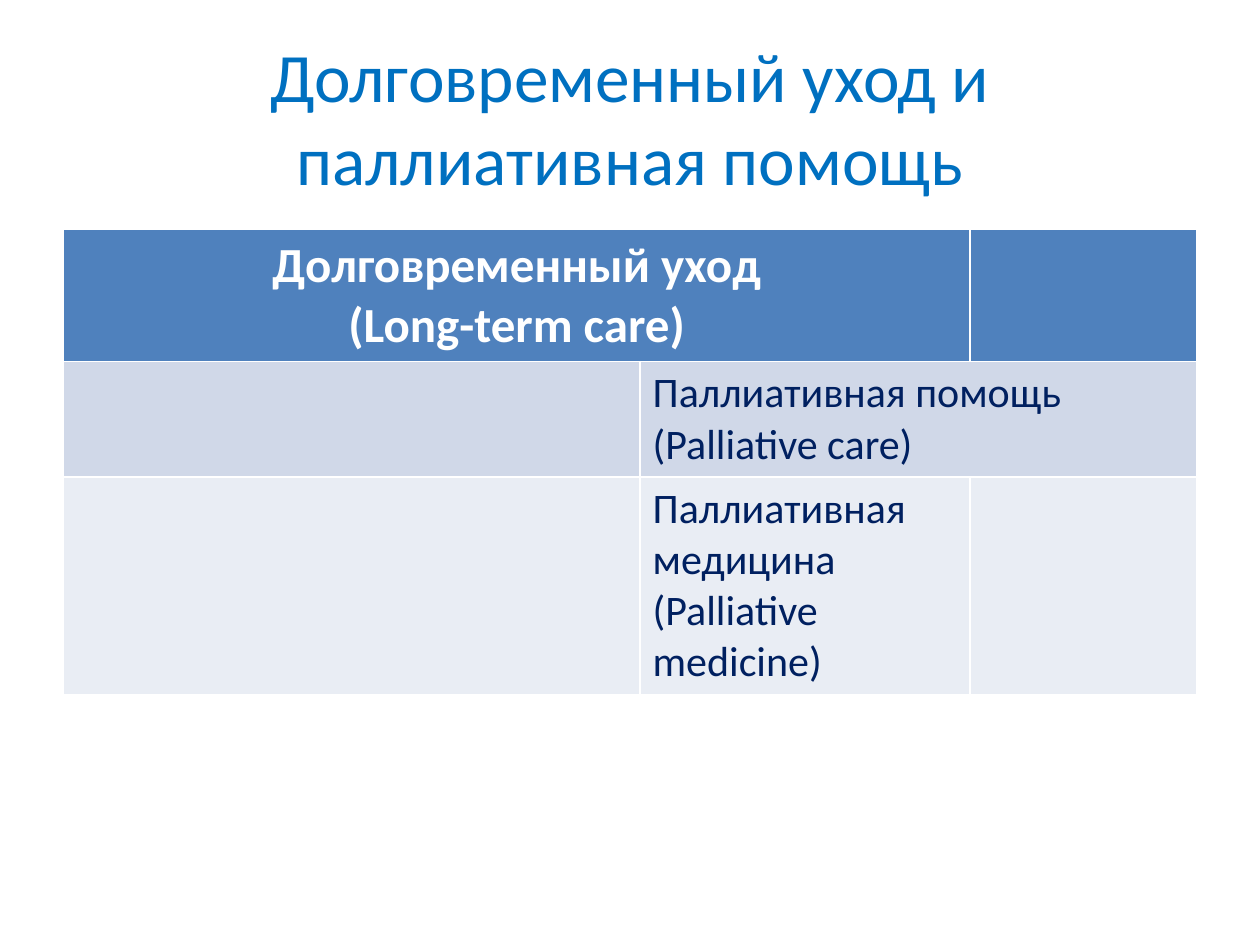
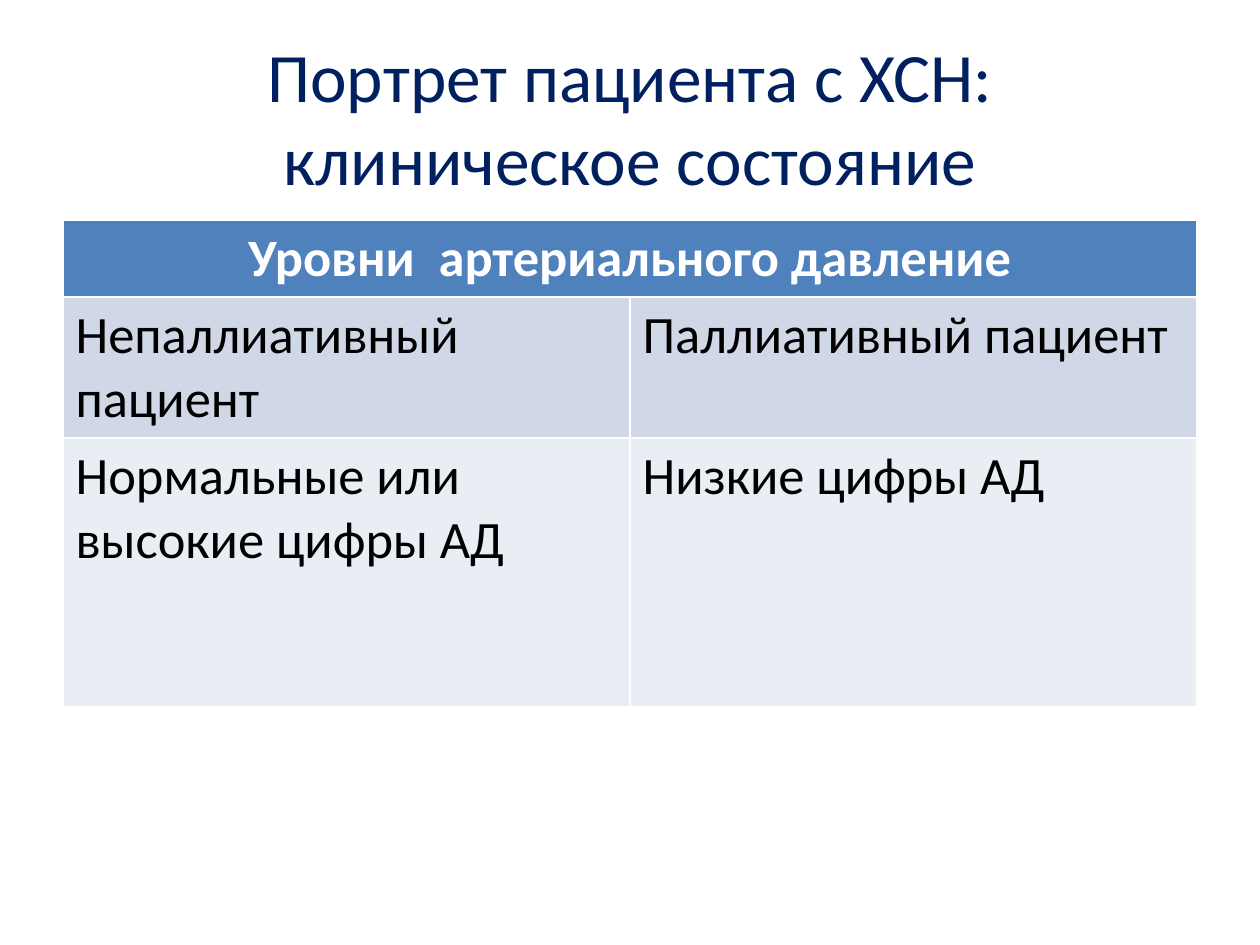
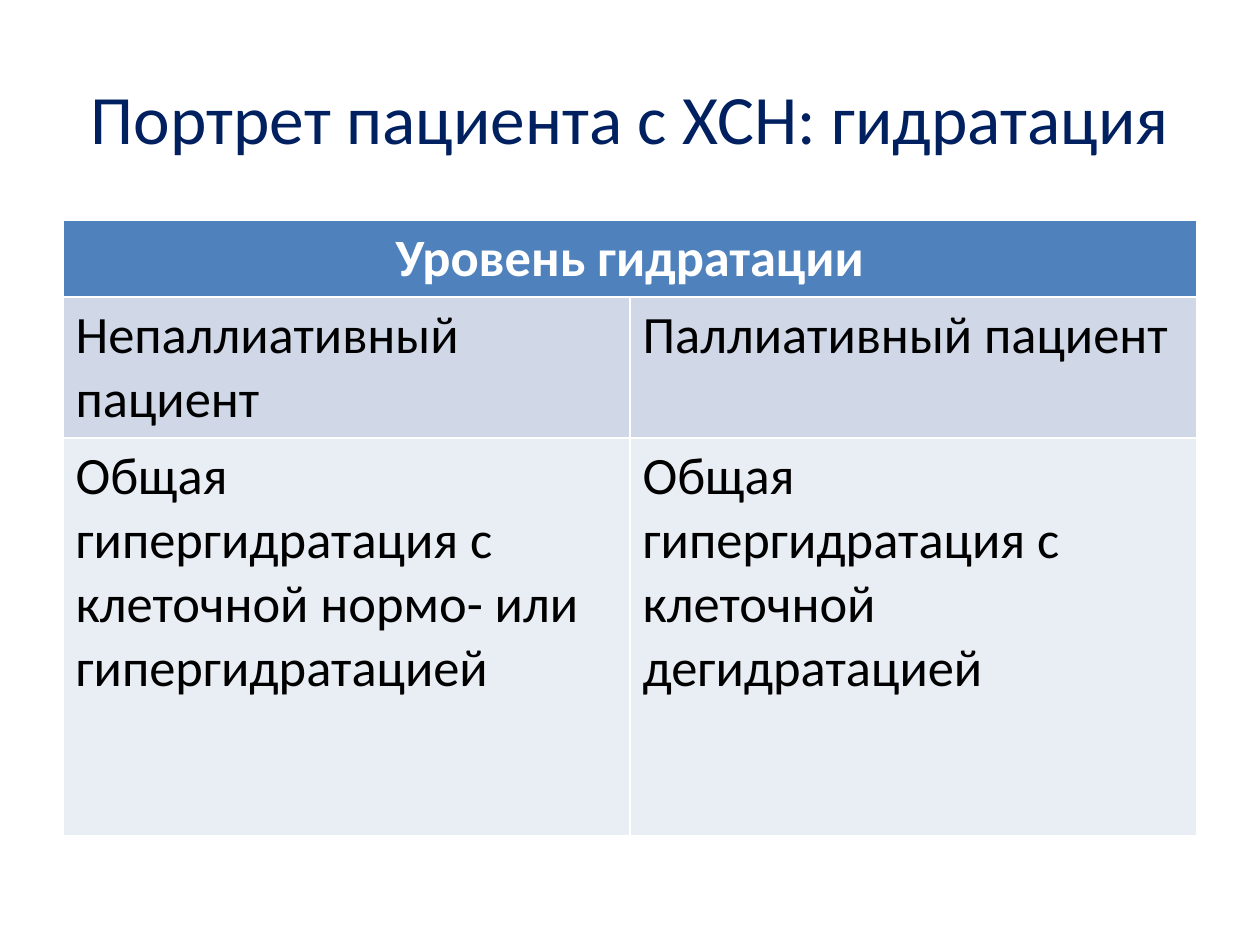
from pptx import Presentation
from pptx.dml.color import RGBColor
from pptx.enum.text import MSO_ANCHOR, MSO_AUTO_SIZE, PP_ALIGN
from pptx.util import Inches, Pt

# Shared style
FONT = "Calibri"
BLUE, NAVY, WHITE, BLACK = "0070C0", "002060", "FFFFFF", "000000"
ROW_FILLS = ["4F81BD", "D0D8E8", "E9EDF4"]
LEFT, WIDTH = 0.5, 9
TITLE_BOX = (LEFT, 0.3, WIDTH, 1.25)
TITLE_ONLY = 5


def color(hex_value):
    return RGBColor.from_string(hex_value)


def format_text(frame, hex_value, size, bold=False, alignment=PP_ALIGN.LEFT):
    font_format = {"name": FONT, "size": Pt(size), "bold": bold}
    for paragraph in frame.paragraphs:
        paragraph.alignment = alignment
        for run in paragraph.runs:
            for attribute, value in font_format.items():
                setattr(run.font, attribute, value)
            run.font.color.rgb = color(hex_value)


def add_titled_slide(presentation, text, hex_value):
    slide = presentation.slides.add_slide(presentation.slide_layouts[TITLE_ONLY])
    title = slide.shapes.title
    for attribute, value in zip(("left", "top", "width", "height"), TITLE_BOX):
        setattr(title, attribute, Inches(value))
    frame = title.text_frame
    frame.text = text
    frame.auto_size = MSO_AUTO_SIZE.NONE
    frame.vertical_anchor = MSO_ANCHOR.MIDDLE
    format_text(frame, hex_value, 39.6, alignment=PP_ALIGN.CENTER)
    return slide


def add_care_table(slide, top, column_widths, row_heights, rows, merges,
                   header_size, body_size, body_color):
    """Fill a table; merges lists (row, first column, last column)."""
    table = slide.shapes.add_table(
        len(rows), len(column_widths), Inches(LEFT), Inches(top),
        Inches(sum(column_widths)), Inches(sum(row_heights))).table
    for column, width in zip(table.columns, column_widths):
        column.width = Inches(width)
    for row, height in zip(table.rows, row_heights):
        row.height = Inches(height)

    for row_index, texts in enumerate(rows):
        for column_index, text in enumerate(texts):
            cell = table.cell(row_index, column_index)
            cell.fill.solid()
            cell.fill.fore_color.rgb = color(ROW_FILLS[row_index])
            if not text:
                continue
            cell.text = text
            if row_index == 0:
                format_text(cell.text_frame, WHITE, header_size, True, PP_ALIGN.CENTER)
            else:
                format_text(cell.text_frame, body_color, body_size)

    for row_index, first, last in merges:
        table.cell(row_index, first).merge(table.cell(row_index, last))


def add_care_types_slide(presentation):
    slide = add_titled_slide(
        presentation, "Долговременный уход и паллиативная помощь", BLUE)
    rows = [
        ["Долговременный уход\n(Long-term care)", "", ""],
        ["", "Паллиативная помощь (Palliative care)", ""],
        ["", "Паллиативная медицина (Palliative medicine)", ""],
    ]
    add_care_table(slide, 1.82, [4.58, 2.62, 1.8], [1.04, 0.91, 1.72], rows,
                   [(0, 0, 1), (1, 1, 2)], 28, 24, NAVY)


def add_patient_slide(presentation, title, header, findings, findings_height):
    slide = add_titled_slide(presentation, title, NAVY)
    rows = [
        [header, ""],
        ["Непаллиативный пациент", "Паллиативный пациент"],
        findings,
    ]
    add_care_table(slide, 1.75, [WIDTH / 2] * 2, [0.6, 1.11, findings_height],
                   rows, [(0, 0, 1)], 30, 30, BLACK)


def main():
    presentation = Presentation()
    presentation.slide_width = Inches(10)
    presentation.slide_height = Inches(7.5)

    add_care_types_slide(presentation)
    add_patient_slide(
        presentation, "Портрет пациента с ХСН: клиническое состояние",
        "Уровни  артериального давление",
        ["Нормальные или высокие цифры АД", "Низкие цифры АД"], 2.13)
    add_patient_slide(
        presentation, "Портрет пациента с ХСН: гидратация",
        "Уровень гидратации",
        ["Общая гипергидратация с клеточной нормо- или гипергидратацией",
         "Общая гипергидратация с клеточной дегидратацией"], 3.16)

    presentation.save("out.pptx")


if __name__ == "__main__":
    main()
